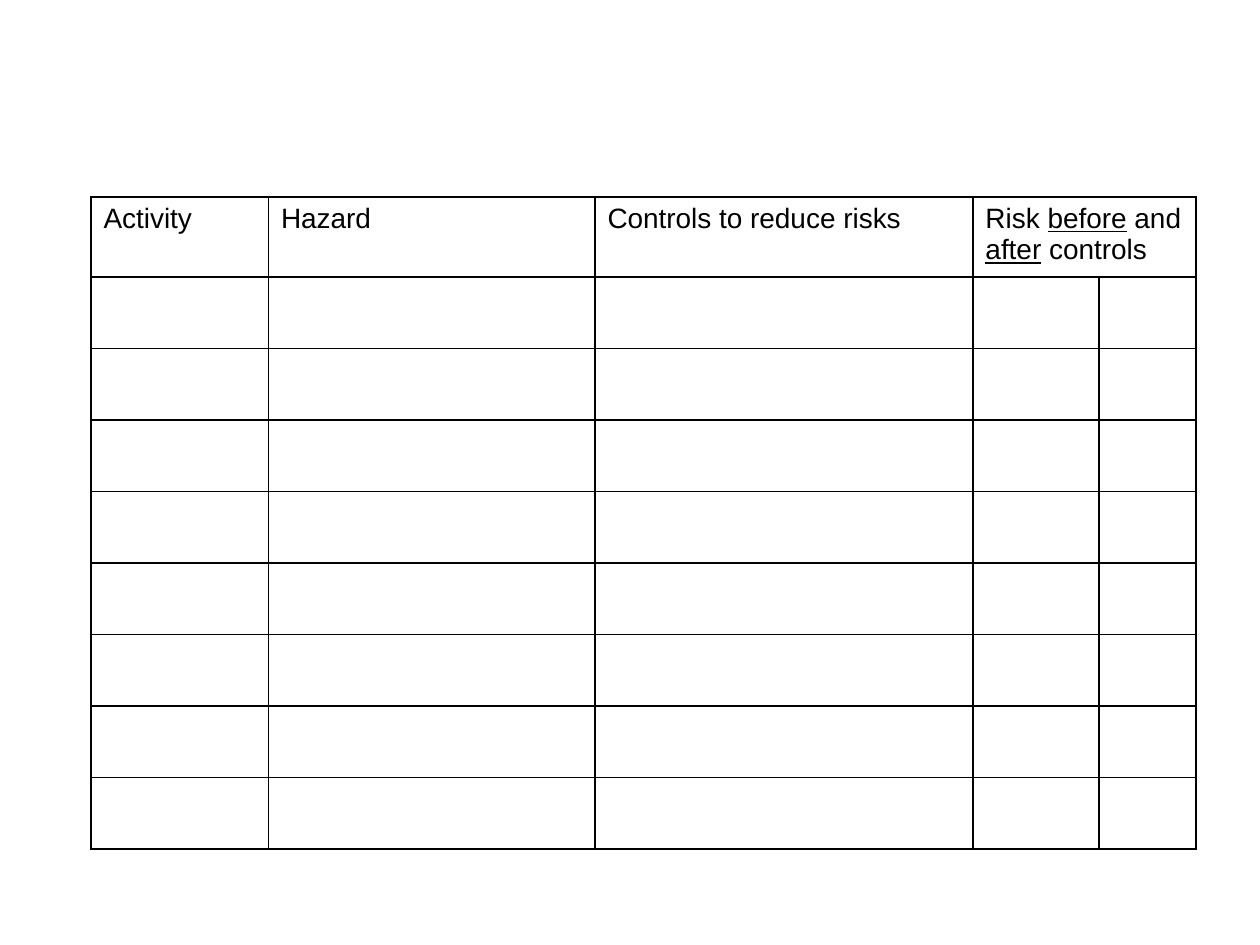
from lxml import etree
from pptx import Presentation
from pptx import util as u
from pptx.dml.color import RGBColor
from pptx.oxml.ns import qn

PX = u.Inches(1) // 252
BLACK = RGBColor(0, 0, 0)
WHITE = RGBColor(255, 255, 255)

COLUMN_WIDTHS = [355, 653, 756, 252, 194]
HEADER_HEIGHT = 160
ENTRY_HEIGHT = 143
ENTRY_COUNT = 8
HEADINGS = [
    [("Activity", False)],
    [("Hazard", False)],
    [("Controls to reduce risks", False)],
    [("Risk ", False), ("before", True), (" and ", False),
     ("after", True), (" controls", False)],
]


class SlideBuilder:
    font_name = "Arial"
    font_size = u.Pt(16)
    border_width = u.Pt(1)

    def __init__(self, deck):
        self.slide = deck.slides.add_slide(deck.slide_layouts[6])

    def background(self, color):
        fill = self.slide.background.fill
        fill.solid()
        fill.fore_color.rgb = color

    def table(self, left, top, widths, heights):
        frame = self.slide.shapes.add_table(
            len(heights), len(widths), left * PX, top * PX,
            sum(widths) * PX, sum(heights) * PX)
        table = frame.table
        for column, width in zip(table.columns, widths):
            column.width = width * PX
        for row, height in zip(table.rows, heights):
            row.height = height * PX
        for cell in table.iter_cells():
            self.border(cell)
            cell.fill.background()
        return table

    def border(self, cell):
        properties = cell._tc.get_or_add_tcPr()
        for side in ("a:lnL", "a:lnR", "a:lnT", "a:lnB"):
            line = etree.SubElement(properties, qn(side), w=str(self.border_width))
            fill = etree.SubElement(line, qn("a:solidFill"))
            etree.SubElement(fill, qn("a:srgbClr"), val=str(BLACK))

    def heading(self, cell, runs):
        para = cell.text_frame.paragraphs[0]
        for words, underlined in runs:
            span = para.add_run()
            span.text = words
            span.font.name = self.font_name
            span.font.size = self.font_size
            span.font.bold = False
            span.font.underline = underlined
            span.font.color.rgb = BLACK


def main():
    deck = Presentation()
    deck.slide_width = 2520 * PX
    deck.slide_height = 1890 * PX
    page = SlideBuilder(deck)
    page.background(WHITE)
    row_heights = [HEADER_HEIGHT] + [ENTRY_HEIGHT] * ENTRY_COUNT
    risk_table = page.table(182, 394, COLUMN_WIDTHS, row_heights)
    risk_table.cell(0, 3).merge(risk_table.cell(0, 4))
    for column, runs in enumerate(HEADINGS):
        page.heading(risk_table.cell(0, column), runs)
    deck.save("out.pptx")


if __name__ == "__main__":
    main()
